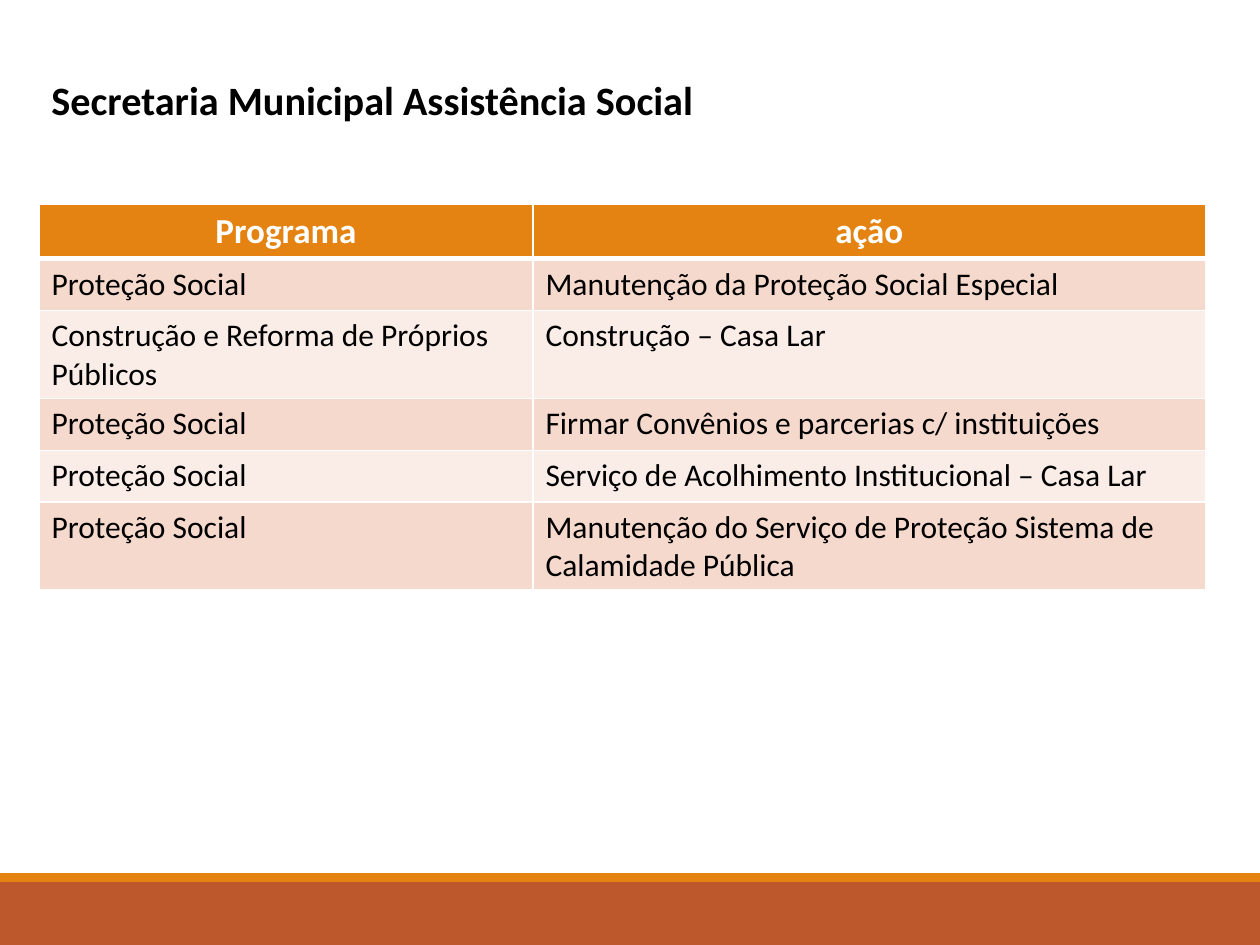
from lxml import etree
from pptx import Presentation
from pptx.dml.color import RGBColor
from pptx.enum.shapes import MSO_SHAPE
from pptx.enum.text import MSO_AUTO_SIZE, PP_ALIGN
from pptx.oxml.ns import qn
from pptx.util import Inches, Pt

RECT = MSO_SHAPE.RECTANGLE
LEFT, CENTER = PP_ALIGN.LEFT, PP_ALIGN.CENTER
FONT = "Calibri"
COLORS = {
    "text": "000000",
    "white": "FFFFFF",
    "orange": "E48312",
    "rust": "BD582C",
    "band_dark": "F5D9CC",
    "band_light": "FAEDE7",
}
COL_WIDTHS = (3.92, 5.34)
ROW_HEIGHT = 0.41
ROWS = [
    ("Programa", "ação"),
    ("Proteção Social", "Manutenção da Proteção Social Especial"),
    ("Construção e Reforma de Próprios Públicos", "Construção – Casa Lar"),
    ("Proteção Social", "Firmar Convênios e parcerias c/ instituições"),
    ("Proteção Social", "Serviço de Acolhimento Institucional – Casa Lar"),
    ("Proteção Social",
     "Manutenção do Serviço de Proteção Sistema de Calamidade Pública"),
]


def rgb(name):
    return RGBColor.from_string(COLORS[name])


def add_run(p, text, size, color, bold=False):
    r = p.add_run()
    r.text = text
    r.font.name = FONT
    r.font.size = Pt(size)
    r.font.bold = bold
    r.font.color.rgb = rgb(color)


def add_bar(s, x, y, w, h, color):
    sp = s.shapes.add_shape(RECT, Inches(x), Inches(y), Inches(w), Inches(h))
    sp.shadow.inherit = False
    sp.fill.solid()
    sp.fill.fore_color.rgb = rgb(color)
    sp.line.fill.background()


def add_footer(s, x, y, w, h, stripe=0.07):
    """Rust band with a thin orange stripe along its top."""
    add_bar(s, x, y + stripe, w, h - stripe, "rust")
    add_bar(s, x, y, w, stripe, "orange")


def add_title(s, x, y, w, h):
    tf = s.shapes.add_textbox(Inches(x), Inches(y), Inches(w), Inches(h)).text_frame
    tf.word_wrap = True
    tf.auto_size = MSO_AUTO_SIZE.SHAPE_TO_FIT_TEXT
    add_run(tf.paragraphs[0], "Secretaria Municipal Assistência Social", 23, "text", True)


def set_borders(cell, bottom):
    tc_pr = cell._tc.get_or_add_tcPr()
    widths = {"lnL": 1, "lnR": 1, "lnT": 1, "lnB": bottom}
    for i, (side, width) in enumerate(widths.items()):
        ln = etree.Element(qn(f"a:{side}"), w=str(Pt(width)))
        fill = etree.SubElement(ln, qn("a:solidFill"))
        etree.SubElement(fill, qn("a:srgbClr"), val=COLORS["white"])
        tc_pr.insert(i, ln)


def add_program_table(s, x, y):
    frame = s.shapes.add_table(
        len(ROWS), len(COL_WIDTHS), Inches(x), Inches(y),
        Inches(sum(COL_WIDTHS)), Inches(ROW_HEIGHT * len(ROWS)))
    table = frame.table
    for column, width in zip(table.columns, COL_WIDTHS):
        column.width = Inches(width)
    for i, texts in enumerate(ROWS):
        table.rows[i].height = Inches(ROW_HEIGHT)
        header = i == 0
        band = "orange" if header else "band_dark" if i % 2 else "band_light"
        for j, text in enumerate(texts):
            cell = table.cell(i, j)
            cell.fill.solid()
            cell.fill.fore_color.rgb = rgb(band)
            set_borders(cell, bottom=3 if header else 1)
            p = cell.text_frame.paragraphs[0]
            p.alignment = CENTER if header else LEFT
            add_run(p, text, 20 if header else 18, "white" if header else "text", header)


def main():
    prs = Presentation()
    prs.slide_width, prs.slide_height = Inches(10), Inches(7.5)
    s = prs.slides.add_slide(prs.slide_layouts[6])
    add_footer(s, 0, 6.93, 10, 0.57)
    add_title(s, 0.31, 0.55, 8.44, 0.49)
    add_program_table(s, 0.31, 1.62)
    prs.save("out.pptx")


if __name__ == "__main__":
    main()
